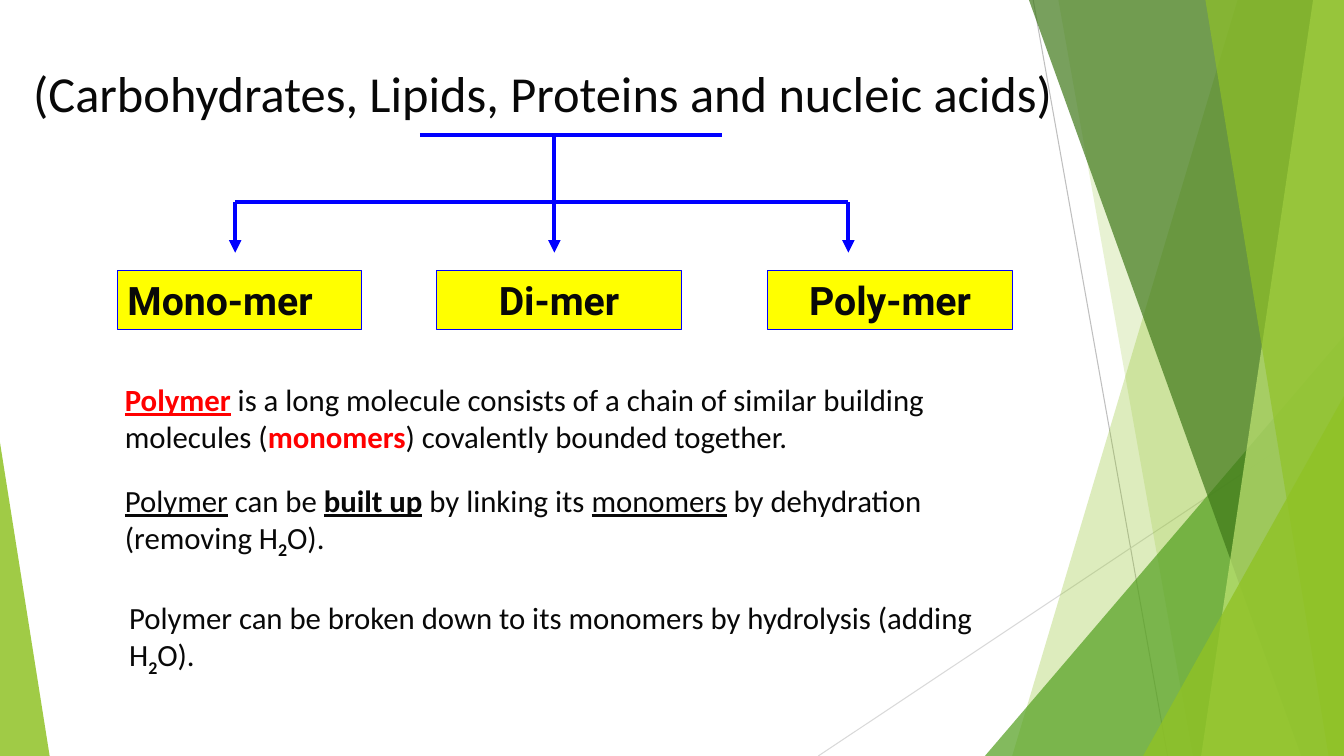
from pptx import Presentation
from pptx import util as u
from pptx.dml import color
from pptx.enum import shapes, text
from pptx.oxml import ns
from lxml import etree

Pt = u.Pt
WIDE, HIGH = 960, 540
HUES = {
    "ink": "080808", "red": "FF0000", "blue": "0000FF", "yellow": "FFFF00",
    "lime": "90C226", "leaf": "54A021", "moss": "3F7819", "pale": "C0E474",
    "gray": "BFBFBF", "mist": "D9D9D9",
}
STYLES = {
    "plain": {},
    "under": {"underline": True},
    "strong": {"bold": True, "underline": True},
    "term": {"bold": True, "hue": "red"},
    "head": {"bold": True, "underline": True, "hue": "red"},
    "sub": {"bold": True, "base": "-25000"},
}
NOTES = [
    (0, 0, [("Polymer", "head"),
            (" is a long molecule consists of a chain of similar building molecules (", "plain"),
            ("monomers", "term"), (") covalently bounded together.", "plain")]),
    (19, 0, [("Polymer", "under"), (" can be ", "plain"), ("built up", "strong"),
             (" by linking its ", "plain"), ("monomers", "under"),
             (" by dehydration (removing H", "plain"), ("2", "sub"), ("O).", "plain")]),
    (27.5, 3, [("Polymer can be broken down to its monomers by hydrolysis (adding H", "plain"),
               ("2", "sub"), ("O).", "plain")]),
]


def rgb(hue):
    return color.RGBColor.from_string(HUES[hue])


def put(obj, vals):
    for key, val in vals.items():
        setattr(obj, key, val)


def place(shape, box):
    put(shape, dict(zip(("left", "top", "width", "height"), map(Pt, box))))


def write(para, words, size, face, hue="ink", base=None, **vals):
    run = para.add_run()
    run.text = words
    put(run.font, {"size": Pt(size), "name": face, "bold": False, **vals})
    run.font.color.rgb = rgb(hue)
    if base:
        run.font._element.set("baseline", base)


def paint(shape, hue, alpha):
    shape.shadow.inherit = False
    shape.fill.solid()
    shape.fill.fore_color.rgb = rgb(hue)
    shape.line.fill.background()
    tint = shape.fill._xPr.find(".//" + ns.qn("a:srgbClr"))
    etree.SubElement(tint, ns.qn("a:alpha")).set("val", str(alpha * 1000))


def wire(slide, start, end, hue, width, arrow=False):
    link = slide.shapes.add_connector(
        shapes.MSO_CONNECTOR.STRAIGHT, *map(Pt, (*start, *end)))
    link.line.color.rgb = rgb(hue)
    link.line.width = Pt(width)
    if arrow:
        etree.SubElement(link.line._get_or_add_ln(), ns.qn("a:tailEnd")).set("type", "triangle")
    etree.SubElement(link._element.spPr, ns.qn("a:effectLst"))


def band(slide, box, top, foot, hue, alpha):
    x, y, w, h = box
    form = slide.shapes.build_freeform(Pt(x + top), Pt(y), scale=1.0)
    form.add_line_segments([(Pt(x + w), Pt(y)), (Pt(x + w), Pt(y + h)), (Pt(x + foot), Pt(y + h))])
    paint(form.convert_to_shape(), hue, alpha)


def wedge(slide, box, side, hue, alpha):
    shape = slide.shapes.add_shape(shapes.MSO_SHAPE.ISOSCELES_TRIANGLE, *map(Pt, box))
    shape.adjustments[0] = side
    paint(shape, hue, alpha)


def decor(slide, box):
    x, y, w, h = box
    wire(slide, (x + 738, y), (x + 834, y + h), "gray", 0.75)
    wire(slide, (x + w, y + 290), (x + 584.5, y + h), "mist", 0.75)
    band(slide, box, 884, 723, "lime", 30)
    band(slide, box, 756, 852, "lime", 20)
    wedge(slide, (x + w - 256.5, y + h - 300, 256.5, 300), 1, "leaf", 72)
    band(slide, box, 735, 929.5, "moss", 70)
    band(slide, box, 938, 858, "pale", 70)
    band(slide, box, 861, 949, "lime", 65)
    wedge(slide, (x + w - 143.5, y + h - 257, 143.5, 257), 1, "lime", 80)
    wedge(slide, (x, y + h - 224, 35.5, 224), 0, "lime", 85)


def head(slide, box):
    title = slide.shapes.title
    slide.shapes.element.append(title.element)
    place(title, box)
    put(title.text_frame, {"word_wrap": True, "auto_size": text.MSO_AUTO_SIZE.NONE,
                           "vertical_anchor": text.MSO_ANCHOR.TOP})
    para = title.text_frame.paragraphs[0]
    para.alignment = text.PP_ALIGN.LEFT
    write(para, "(Carbohydrates, Lipids, Proteins and nucleic acids)", 36, "Calibri")


def label(slide, box, words, align):
    shape = slide.shapes.add_shape(shapes.MSO_SHAPE.RECTANGLE, *map(Pt, box))
    shape.shadow.inherit = False
    shape.fill.solid()
    shape.fill.fore_color.rgb = rgb("yellow")
    shape.line.color.rgb = rgb("blue")
    shape.line.width = Pt(0.75)
    put(shape.text_frame, {"word_wrap": True, "vertical_anchor": text.MSO_ANCHOR.TOP})
    para = shape.text_frame.paragraphs[0]
    para.alignment = align
    write(para, words, 28, "Roboto", bold=True)


def tree(slide, box):
    x, y, w, h = box
    mid, bar, tip = x + 312, y + 48, y + 84
    wire(slide, (x + 216, y), (x + 432, y), "blue", 3)
    wire(slide, (mid, y), (mid, bar), "blue", 3)
    wire(slide, (x + 84, bar), (x + 522, bar), "blue", 3)
    left, center = text.PP_ALIGN.LEFT, text.PP_ALIGN.CENTER
    for drop, edge, words, align in [(84, 0, "Mono-mer", left), (312, 228, "Di-mer", center),
                                     (522, w - 174.5, "Poly-mer", center)]:
        wire(slide, (x + drop, bar), (x + drop, tip), "blue", 3, True)
        label(slide, (x + edge, y + h - 42, 174.5, 42), words, align)


def notes(slide, box):
    body = slide.placeholders[1]
    slide.shapes.element.append(body.element)
    place(body, box)
    frame = body.text_frame
    put(frame, {"word_wrap": True, "auto_size": text.MSO_AUTO_SIZE.NONE})
    for i, (gap, shift, runs) in enumerate(NOTES):
        para = frame.add_paragraph() if i else frame.paragraphs[0]
        para.space_before = Pt(gap)
        props = para._p.get_or_add_pPr()
        for key, val in {"marL": Pt(shift), "indent": 0}.items():
            props.set(key, str(val))
        etree.SubElement(props, ns.qn("a:buNone"))
        for words, style in runs:
            write(para, words, 22, "Calibri", **STYLES[style])


def main():
    deck = Presentation()
    put(deck, {"slide_width": Pt(WIDE), "slide_height": Pt(HIGH)})
    slide = deck.slides.add_slide(deck.slide_layouts[1])
    decor(slide, (0, 0, WIDE, HIGH))
    head(slide, (16.5, 41, 770.5, 51))
    tree(slide, (84, 96.5, 639, 139))
    notes(slide, (82, 268.5, 628, 214.5))
    deck.save("out.pptx")


if __name__ == "__main__":
    main()
